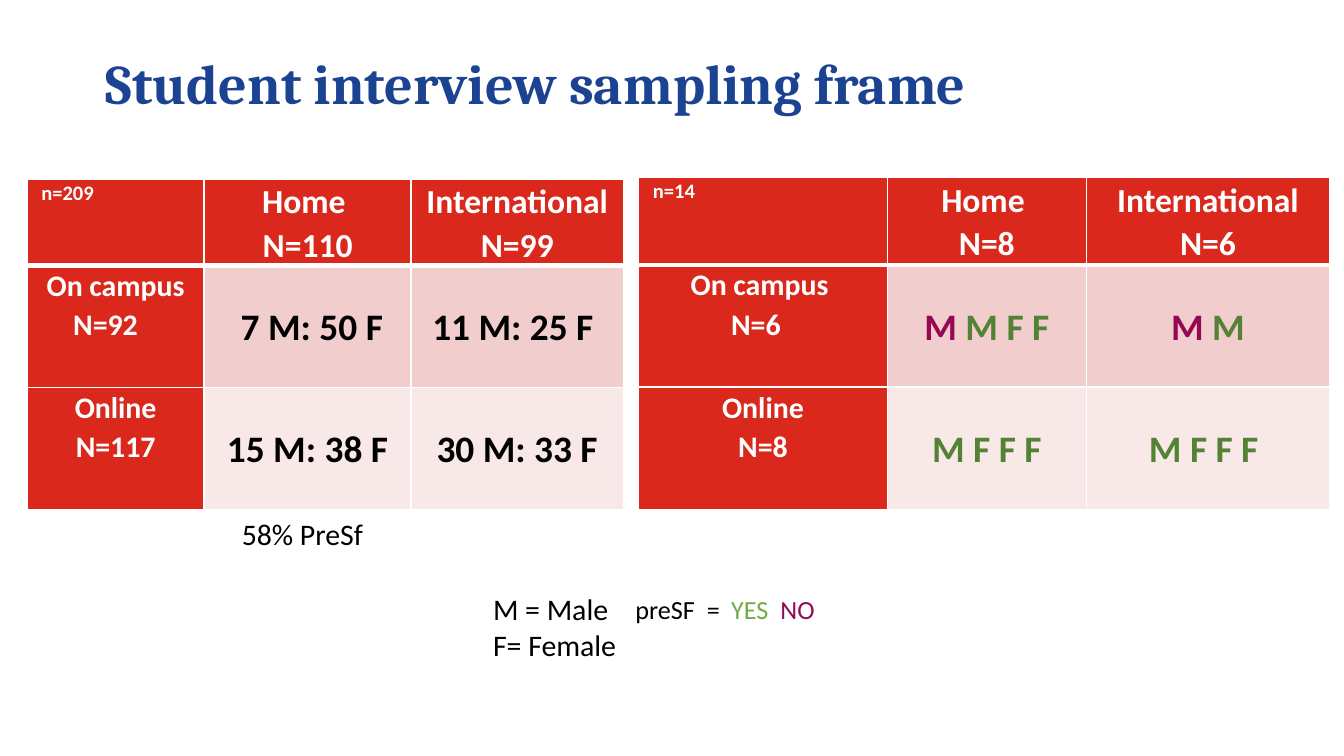
import lxml.etree
import pptx
import pptx.dml.color
import pptx.enum.text
import pptx.oxml.ns
import pptx.util

Cm = pptx.util.Cm
Pt = pptx.util.Pt
RGBColor = pptx.dml.color.RGBColor
Align = pptx.enum.text.PP_ALIGN
Anchor = pptx.enum.text.MSO_ANCHOR
qn = pptx.oxml.ns.qn

WHITE = RGBColor(0xFF, 0xFF, 0xFF)
BLACK = RGBColor(0x00, 0x00, 0x00)
BLUE = RGBColor(0x1C, 0x43, 0x92)
RED = RGBColor(0xDA, 0x28, 0x1C)
ROSE = RGBColor(0xF1, 0xCD, 0xCD)
PALE = RGBColor(0xF8, 0xE8, 0xE8)
PLUM = RGBColor(0x96, 0x08, 0x53)
GREEN = RGBColor(0x54, 0x82, 0x35)
LIME = RGBColor(0x70, 0xAD, 0x47)

PLAIN = {"name": "Calibri", "bold": False}
BOLD = {"name": "Calibri", "bold": True}
TITLE = {"name": "Cambria", "bold": True, "size": Pt(30)}
NOTE = {**PLAIN, "size": Pt(16)}
KEY = {**PLAIN, "size": Pt(14)}
TOTAL = {**BOLD, "size": Pt(11)}
HEAD = {**BOLD, "size": Pt(18)}
SIDE = {**BOLD, "size": Pt(16)}
COUNT = {**BOLD, "size": Pt(20)}
PAD = {"margin_left": Cm(0.18), "margin_right": Cm(0.18),
       "margin_top": 0, "margin_bottom": 0}
HEIGHTS = (1.6, 2.31, 2.31)


def apply(item, values):
    for name, value in values.items():
        setattr(item, name, value)


def write(frame, lines, font, para):
    for num, runs in enumerate(lines):
        line = frame.add_paragraph() if num else frame.paragraphs[0]
        apply(line, para)
        for text, color in runs:
            run = line.add_run()
            run.text = text
            apply(run.font, font)
            run.font.color.rgb = color


def add_text(slide, place, lines, font, para, frame):
    box = slide.shapes.add_textbox(*(Cm(n) for n in place))
    apply(box.text_frame, frame)
    write(box.text_frame, lines, font, para)
    return box


def add_tabs(line, stops):
    tabs = lxml.etree.SubElement(line._p.get_or_add_pPr(), qn("a:tabLst"))
    for stop in stops:
        lxml.etree.SubElement(tabs, qn("a:tab"), pos=str(Cm(stop)), algn="l")


def add_edges(cell, row):
    widths = {"L": 1, "R": 1, "T": 3 if row == 1 else 1,
              "B": 3 if row == 0 else 1}
    for side, width in widths.items():
        edge = lxml.etree.SubElement(cell._tc.get_or_add_tcPr(),
                                     qn("a:ln" + side), w=str(Pt(width)))
        fill = lxml.etree.SubElement(edge, qn("a:solidFill"))
        lxml.etree.SubElement(fill, qn("a:srgbClr"), val=str(WHITE))


def fill_cell(cell, row, col, lines):
    add_edges(cell, row)
    apply(cell, PAD)
    cell.fill.solid()
    para = {"alignment": Align.CENTER, "line_spacing": 1.07}
    if row and col:
        cell.fill.fore_color.rgb = ROSE if row == 1 else PALE
        cell.vertical_anchor = Anchor.MIDDLE
        font = COUNT
    else:
        cell.fill.fore_color.rgb = RED
        lines = [[(text, WHITE)] for text in lines]
        font = HEAD if col else SIDE
        if row == col:
            font = TOTAL
            para["alignment"] = Align.LEFT
            cell.margin_left = Cm(0.27)
    write(cell.text_frame, lines, font, para)


def add_grid(slide, left, top, widths, rows, shift):
    shape = slide.shapes.add_table(len(rows), len(widths), Cm(left), Cm(top),
                                   Cm(sum(widths)), Cm(sum(HEIGHTS)))
    table = shape.table
    apply(table, {"first_row": False, "horz_banding": False})
    for col, width in enumerate(widths):
        table.columns[col].width = Cm(width)
    for row, cells in enumerate(rows):
        table.rows[row].height = Cm(HEIGHTS[row])
        for col, lines in enumerate(cells):
            fill_cell(table.cell(row, col), row, col, lines)
    campus = table.cell(1, 0).text_frame.paragraphs[1]
    campus._p.get_or_add_pPr().set("marR", str(Cm(shift)))


def main():
    deck = pptx.Presentation()
    apply(deck, {"slide_width": Cm(25.4), "slide_height": Cm(14.29)})
    slide = deck.slides.add_slide(deck.slide_layouts[6])

    add_grid(slide, 12.07, 3.35, (4.7, 3.76, 4.6), [
        [["n=14"], ["Home ", "N=8"], ["International", "N=6"]],
        [["On campus ", "N=6"],
         [[("M ", PLUM), ("M F F", GREEN)]],
         [[("M ", PLUM), ("M", GREEN)]]],
        [["Online", "N=8"],
         [[("M F F F", GREEN)]], [[("M F F F ", GREEN)]]],
    ], 0.27)

    title = add_text(slide, (1.75, 0.76, 21.49, 1.75),
                     [[("Student interview sampling frame", BLUE)]], TITLE,
                     {"line_spacing": 0.9},
                     {"word_wrap": True, "vertical_anchor": Anchor.MIDDLE})
    title.fill.solid()
    title.fill.fore_color.rgb = WHITE

    wrap = {"word_wrap": True}
    add_text(slide, (9.07, 11.05, 3.78, 2.39),
             [[("M = Male", BLACK)], [("F= Female", BLACK)]], NOTE, {}, wrap)
    legend = add_text(slide, (11.76, 11.1, 3.94, 1.45),
                      [[("preSF\t=\t", BLACK), ("YES\t", LIME), ("NO", PLUM)]],
                      KEY, {}, {"word_wrap": False})
    add_tabs(legend.text_frame.paragraphs[0], (1.35, 1.81, 2.74))

    add_grid(slide, 0.51, 3.38, (3.35, 3.91, 4.01), [
        [["n=209"], ["Home ", "N=110"], ["International", "N=99"]],
        [["On campus", "N=92"],
         [[(" 7 M: 50 F", BLACK)]], [[("11 M: 25 F ", BLACK)]]],
        [["Online", "N=117"],
         [[("15 M: 38 F", BLACK)]], [[("30 M: 33 F", BLACK)]]],
    ], 0.38)
    add_text(slide, (4.32, 9.63, 3.78, 1.7),
             [[("58% PreSf", BLACK)]], NOTE, {}, wrap)

    deck.save("out.pptx")


if __name__ == "__main__":
    main()
